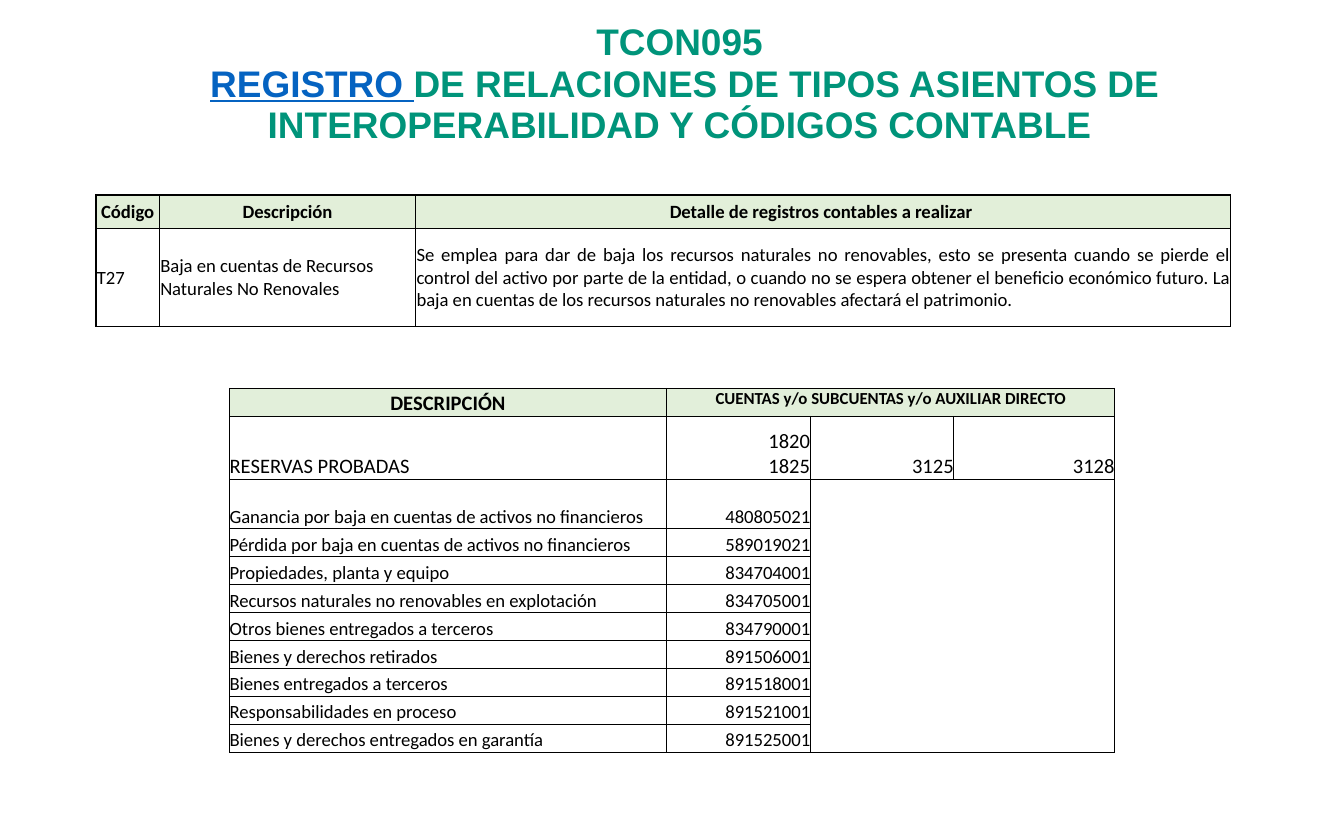
from lxml import etree
from pptx import Presentation
from pptx.dml.color import RGBColor
from pptx.enum.text import MSO_ANCHOR, MSO_AUTO_SIZE, PP_ALIGN
from pptx.oxml.ns import qn
from pptx.util import Pt

LEFT, CENTER, RIGHT, JUSTIFY = (
    PP_ALIGN.LEFT, PP_ALIGN.CENTER, PP_ALIGN.RIGHT, PP_ALIGN.JUSTIFY)
TOP, MIDDLE, BOTTOM = MSO_ANCHOR.TOP, MSO_ANCHOR.MIDDLE, MSO_ANCHOR.BOTTOM
NO_FIT = MSO_AUTO_SIZE.NONE

COLORS = {"heading": "00947A", "term": "0563C1", "text": "000000",
          "header": "E2EFD9", "accounts": "E2EFDA"}


def apply(target, values):
    for name, value in values.items():
        setattr(target, name, value)


class SlideBuilder:
    heading_font, body_font = "Arial", "Calibri"
    heading_size = 19.8

    def __init__(self, slide):
        self.slide = slide

    def style(self, font, color, **values):
        apply(font, values)
        font.color.rgb = RGBColor.from_string(COLORS[color])

    def end_size(self, paragraph, size):
        """Size of the paragraph mark, which sets the height of empty lines."""
        etree.SubElement(paragraph._p, qn("a:endParaRPr"), sz=str(round(size * 100)))

    def title(self, left, top, width, height, lines):
        title = self.slide.shapes.title
        apply(title, {"left": Pt(left), "top": Pt(top),
                      "width": Pt(width), "height": Pt(height)})
        apply(title.text_frame, {"word_wrap": True, "auto_size": NO_FIT,
                                 "vertical_anchor": MIDDLE})
        paragraph = title.text_frame.paragraphs[0]
        apply(paragraph, {"alignment": CENTER, "line_spacing": 0.94})
        for line in lines:
            for text, color in line:
                run = paragraph.add_run()
                run.text = text
                self.style(run.font, color, name=self.heading_font, bold=True,
                           size=Pt(self.heading_size), underline=color == "term")
            paragraph.add_line_break()
        for line_break in paragraph._p.findall(qn("a:br")):
            etree.SubElement(line_break, qn("a:rPr"),
                             sz=str(round(self.heading_size * 100)))
        self.end_size(paragraph, self.heading_size)

    def table(self, left, top, columns, rows, line_width, inset):
        frame = self.slide.shapes.add_table(
            len(rows), len(columns), Pt(left), Pt(top), Pt(sum(columns)), Pt(sum(rows)))
        table = frame.table
        apply(table, {"first_row": False, "horz_banding": False})
        for column, width in zip(table.columns, columns):
            column.width = Pt(width)
        for row, height in zip(table.rows, rows):
            row.height = Pt(height)
        for cell in table.iter_cells():
            apply(cell, {"margin_left": Pt(inset), "margin_right": Pt(inset),
                         "margin_top": Pt(inset), "margin_bottom": 0})
            self.borders(cell, line_width)
            cell.fill.background()
        return table

    def borders(self, cell, width):
        properties = cell._tc.get_or_add_tcPr()
        for side in ("a:lnL", "a:lnR", "a:lnT", "a:lnB"):
            line = etree.SubElement(properties, qn(side), w=str(Pt(width)))
            fill = etree.SubElement(line, qn("a:solidFill"))
            etree.SubElement(fill, qn("a:srgbClr"), val=COLORS["text"])

    def cell(self, cell, text, align=LEFT, anchor=BOTTOM, size=10, bold=False, fill=None):
        cell.text = text
        cell.vertical_anchor = anchor
        if fill:
            cell.fill.solid()
            cell.fill.fore_color.rgb = RGBColor.from_string(COLORS[fill])
        for paragraph in cell.text_frame.paragraphs:
            paragraph.alignment = align
            for run in paragraph.runs:
                self.style(run.font, "text", name=self.body_font, size=Pt(size), bold=bold)
            self.end_size(paragraph, size)


ENTRY_HEADERS = ["Código", "Descripción", "Detalle de registros contables a realizar "]
ENTRY = [
    ("T27", LEFT),
    ("Baja en cuentas de Recursos Naturales No Renovales", LEFT),
    ("Se emplea para dar de baja los recursos naturales no renovables, esto se presenta "
     "cuando se pierde el control del activo por parte de la entidad, o cuando no se espera "
     "obtener el beneficio económico futuro. La baja en cuentas de los recursos naturales "
     "no renovables afectará el patrimonio.", JUSTIFY),
]
RESERVES = ["RESERVAS PROBADAS", "1820\n1825", "3125", "3128"]
ACCOUNTS = [
    ("Ganancia por baja en cuentas de activos no financieros", "480805021"),
    ("Pérdida por baja en cuentas de activos no financieros", "589019021"),
    ("Propiedades, planta y equipo", "834704001"),
    ("Recursos naturales no renovables en explotación", "834705001"),
    ("Otros bienes entregados a terceros", "834790001"),
    ("Bienes y derechos retirados", "891506001"),
    ("Bienes entregados a terceros", "891518001"),
    ("Responsabilidades en proceso", "891521001"),
    ("Bienes y derechos entregados en garantía", "891525001"),
]


def main():
    deck = Presentation()
    deck.slide_width, deck.slide_height = Pt(720), Pt(450)
    builder = SlideBuilder(deck.slides.add_slide(deck.slide_layouts[5]))

    # Heading
    builder.title(8, 18.7, 712, 77, [
        [("TCON095", "heading")],
        [(" ", "heading"), ("REGISTRO ", "term"),
         ("DE RELACIONES DE TIPOS ASIENTOS DE INTEROPERABILIDAD Y CÓDIGOS CONTABLE",
          "heading")],
    ])

    # Entry type
    entry = builder.table(51.4, 104.4, [34, 137.3, 436.5], [18, 52.5], 1, 0.5)
    for column, header in enumerate(ENTRY_HEADERS):
        builder.cell(entry.cell(0, column), header, CENTER, MIDDLE, bold=True, fill="header")
    for column, (text, align) in enumerate(ENTRY):
        builder.cell(entry.cell(1, column), text, align, MIDDLE)

    # Accounts: header, reserves, then one row per account
    row_heights = [15, 33.7, 26.2] + [15] * (len(ACCOUNTS) - 1)
    accounts = builder.table(123, 208, [234, 77, 77, 86.2], row_heights, 0.5, 0)
    builder.cell(accounts.cell(0, 0), "DESCRIPCIÓN", CENTER, size=11, bold=True,
                 fill="accounts")
    builder.cell(accounts.cell(0, 1), "CUENTAS y/o SUBCUENTAS y/o AUXILIAR DIRECTO",
                 CENTER, TOP, size=9, bold=True, fill="accounts")
    for column in (2, 3):
        builder.cell(accounts.cell(0, column), "", size=9)
    for column, text in enumerate(RESERVES):
        builder.cell(accounts.cell(1, column), text, RIGHT if column else LEFT, size=11)
    for row, (name, code) in enumerate(ACCOUNTS, start=2):
        builder.cell(accounts.cell(row, 0), name)
        builder.cell(accounts.cell(row, 1), code, RIGHT)
        for column in (2, 3):
            builder.cell(accounts.cell(row, column), "")
    accounts.cell(0, 1).merge(accounts.cell(0, 3))
    accounts.cell(2, 2).merge(accounts.cell(len(row_heights) - 1, 3))

    deck.save("out.pptx")


if __name__ == "__main__":
    main()
